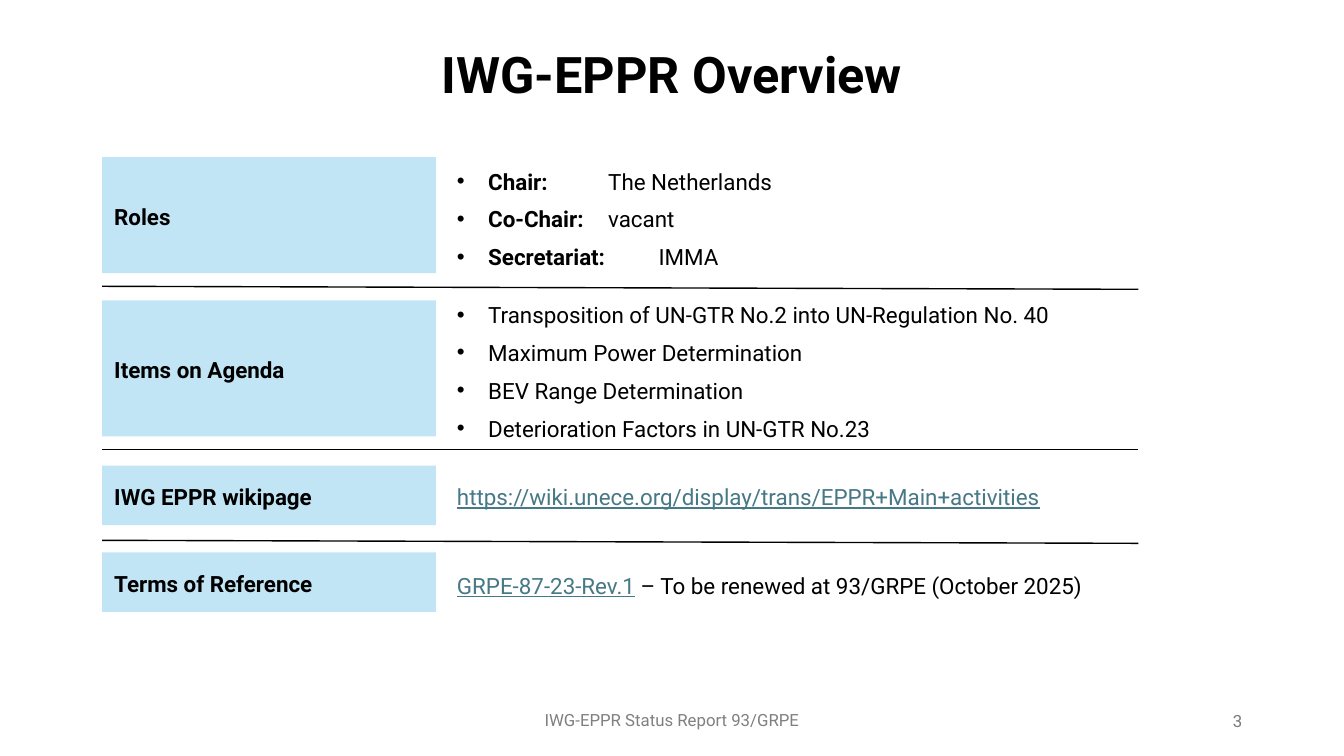
from dataclasses import dataclass

from lxml.etree import SubElement
from pptx import Presentation
from pptx.dml.color import RGBColor
from pptx.enum.shapes import MSO_CONNECTOR, MSO_SHAPE
from pptx.enum.text import MSO_ANCHOR, PP_ALIGN
from pptx.oxml.ns import qn
from pptx.util import Inches, Pt


@dataclass(frozen=True)
class Theme:
    font: str = "Roboto"
    ink: str = "000000"
    label_fill: str = "C1E5F5"
    link: str = "467886"
    footer: str = "808080"
    page: str = "797979"
    title_size: int = 36
    body_size: int = 16
    footer_size: int = 12


THEME = Theme()
LABEL_LEFT, LABEL_WIDTH = 7.6, 24.83
DETAIL_LEFT, DETAIL_WIDTH = 34, 52.7
RULE_RIGHT = 84.7
BOLD = {"bold": True}
LINK = {"color": THEME.link, "underline": True}
LABEL_INSETS = (0.12, 0.08, 0.12, 0.08)
NO_INSETS = (0, 0, 0, 0)
DEFAULT_INSETS = (0.1, 0.05, 0.1, 0.05)

# label, (top, height) of the label, (top, height) of the detail, bulleted, lines
SECTIONS = [
    ("Roles", (20.8, 15.33), (20.53, 16.53), True, [
        [("Chair: \t\t", BOLD), ("The Netherlands", {})],
        [("Co-Chair:", BOLD), ("\tvacant", {})],
        [("Secretariat: \t", BOLD), ("IMMA", {})],
    ]),
    ("Items on Agenda", (39.73, 18), (39.6, 18.67), True, [
        [("Transposition of UN-GTR No.2 into UN-Regulation No. 40", {})],
        [("Maximum Power Determination", {})],
        [("BEV Range Determination", {})],
        [("Deterioration Factors in UN-GTR No.23", {})],
    ]),
    ("IWG EPPR wikipage", (61.6, 7.87), (61.6, 7.87), False, [
        [("https://wiki.unece.org/display/trans/EPPR+Main+activities", LINK)],
    ]),
    ("Terms of Reference", (73.07, 7.87), (73.33, 7.87), False, [
        [("GRPE-87-23-Rev.1", LINK),
         (" – To be renewed at 93/GRPE (October 2025)", {})],
    ]),
]
RULES = [(37.87, 38.27), (59.47, 59.47), (71.47, 71.87)]  # left and right heights


def add_run(paragraph, text, size=THEME.body_size, color=THEME.ink,
            bold=False, underline=False):
    run = paragraph.add_run()
    run.text = text
    font = run.font
    font.name, font.size = THEME.font, Pt(size)
    font.bold, font.underline = bold, underline
    font.color.rgb = RGBColor.from_string(color)


def add_bullet(paragraph):
    properties = paragraph._p.get_or_add_pPr()
    properties.set("marL", str(Inches(0.31)))
    properties.set("indent", str(-Inches(0.31)))
    SubElement(properties, qn("a:buFont")).set("typeface", "Arial")
    SubElement(properties, qn("a:buChar")).set("char", "•")


class SlideBuilder:
    """Places elements by percent of the slide's width and height."""

    def __init__(self, presentation, theme):
        self.theme = theme
        self.width = presentation.slide_width
        self.height = presentation.slide_height
        self.slide = presentation.slides.add_slide(presentation.slide_layouts[6])

    def x(self, percent):
        return round(self.width * percent / 100)

    def y(self, percent):
        return round(self.height * percent / 100)

    def box(self, left, top, width, height):
        return self.x(left), self.y(top), self.x(width), self.y(height)

    def fill_text(self, shape, lines, insets=DEFAULT_INSETS, align=PP_ALIGN.LEFT,
                  anchor=MSO_ANCHOR.MIDDLE, spacing=1.0, before=0, bulleted=False):
        frame = shape.text_frame
        frame.word_wrap = True
        frame.vertical_anchor = anchor
        (frame.margin_left, frame.margin_top,
         frame.margin_right, frame.margin_bottom) = map(Inches, insets)
        for index, runs in enumerate(lines):
            paragraph = frame.add_paragraph() if index else frame.paragraphs[0]
            paragraph.alignment = align
            paragraph.line_spacing = spacing
            paragraph.space_before = Pt(before)
            if bulleted:
                add_bullet(paragraph)
            for text, style in runs:
                add_run(paragraph, text, **style)

    def text(self, place, lines, **layout):
        self.fill_text(self.slide.shapes.add_textbox(*self.box(*place)), lines, **layout)

    def label(self, top, height, text):
        place = self.box(LABEL_LEFT, top, LABEL_WIDTH, height)
        label = self.slide.shapes.add_shape(MSO_SHAPE.RECTANGLE, *place)
        label.shadow.inherit = False
        label.fill.solid()
        label.fill.fore_color.rgb = RGBColor.from_string(self.theme.label_fill)
        label.line.fill.background()
        self.fill_text(label, [[(text, BOLD)]], insets=LABEL_INSETS,
                       spacing=1.1, before=6)

    def detail(self, top, height, lines, bulleted):
        self.text((DETAIL_LEFT, top, DETAIL_WIDTH, height), lines,
                  insets=NO_INSETS, spacing=1.1, before=6, bulleted=bulleted)

    def rule(self, left_height, right_height):
        rule = self.slide.shapes.add_connector(
            MSO_CONNECTOR.STRAIGHT, self.x(LABEL_LEFT), self.y(left_height),
            self.x(RULE_RIGHT), self.y(right_height))
        rule.line.width = Pt(1)
        rule.line.color.rgb = RGBColor.from_string(self.theme.ink)
        SubElement(rule._element.spPr, qn("a:effectLst"))


def main():
    presentation = Presentation()
    presentation.slide_width, presentation.slide_height = Inches(13.33), Inches(7.5)
    overview = SlideBuilder(presentation, THEME)

    title_style = {"size": THEME.title_size, "bold": True}
    overview.text((0, 0, 100, 20.53), [[("IWG-EPPR Overview", title_style)]],
                  align=PP_ALIGN.CENTER, spacing=0.9)
    for heading, label_rows, detail_rows, bulleted, lines in SECTIONS:
        overview.label(*label_rows, heading)
        overview.detail(*detail_rows, lines, bulleted)
    for heights in RULES:
        overview.rule(*heights)

    footer_style = {"size": THEME.footer_size, "color": THEME.footer}
    overview.text((0, 93.2, 100, 6.8),
                  [[("IWG-EPPR Status Report 93/GRPE", footer_style)]],
                  align=PP_ALIGN.CENTER, anchor=MSO_ANCHOR.TOP)
    page_style = {"size": THEME.footer_size, "color": THEME.page}
    overview.text((70.67, 92.67, 22.5, 5.33), [[("3", page_style)]],
                  align=PP_ALIGN.RIGHT)
    presentation.save("out.pptx")


if __name__ == "__main__":
    main()
